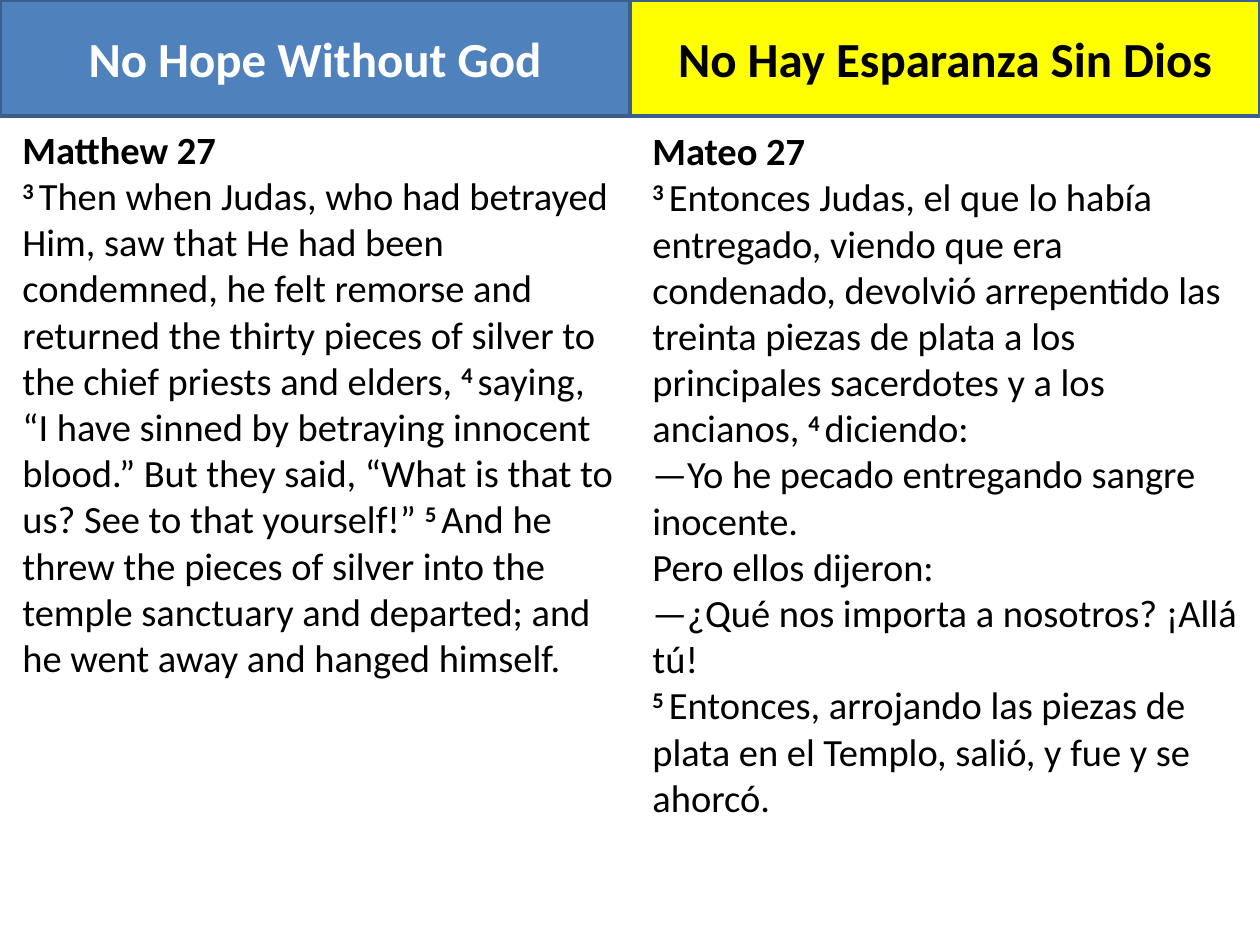
import pptx
import pptx.dml.color
import pptx.enum.shapes
import pptx.enum.text
import pptx.util

COLUMN = 1 / 2
HEADER_HEIGHT = 0.92 / 7.5
GUTTER = 0.08 / 10

# Each paragraph is a list of (verse number, text) pieces.
ENGLISH = [
    [("3", "Then when Judas, who had betrayed Him, saw that He had been condemned, "
           "he felt remorse and returned the thirty pieces of silver to the chief "
           "priests and elders, "),
     ("4", "saying, “I have sinned by betraying innocent blood.” But they said, "
           "“What is that to us? See to that yourself!” "),
     ("5", "And he threw the pieces of silver into the temple sanctuary and "
           "departed; and he went away and hanged himself.")],
]
SPANISH = [
    [("3", "Entonces Judas, el que lo había entregado, viendo que era condenado, "
           "devolvió arrepentido las treinta piezas de plata a los principales "
           "sacerdotes y a los ancianos, "),
     ("4", "diciendo:")],
    [("", "—Yo he pecado entregando sangre inocente.")],
    [("", "Pero ellos dijeron:")],
    [("", "—¿Qué nos importa a nosotros? ¡Allá tú!")],
    [("5", "Entonces, arrojando las piezas de plata en el Templo, salió, y fue y se "
           "ahorcó.")],
]


def color(code):
    return pptx.dml.color.RGBColor.from_string(code)


class ScriptureSlide:
    font_name = "Calibri"
    title_size = 28
    body_size = 22
    ink = "000000"
    border = "3A5F8C"

    def __init__(self, deck):
        self.width, self.height = deck.slide_width, deck.slide_height
        self.page = deck.slides.add_slide(deck.slide_layouts[6])

    def place(self, left, top, width, height):
        """Turn shares of the slide's size into lengths."""
        return (round(left * self.width), round(top * self.height),
                round(width * self.width), round(height * self.height))

    def style(self, para, size, ink):
        para.font.name = self.font_name
        para.font.size = pptx.util.Pt(size)
        para.font.color.rgb = color(ink)

    def header(self, column, title, fill, ink):
        box = self.page.shapes.add_shape(
            pptx.enum.shapes.MSO_SHAPE.RECTANGLE,
            *self.place(column * COLUMN, 0, COLUMN, HEADER_HEIGHT))
        box.shadow.inherit = False
        box.fill.solid()
        box.fill.fore_color.rgb = color(fill)
        box.line.color.rgb = color(self.border)
        box.line.width = pptx.util.Pt(2)
        box.text_frame.vertical_anchor = pptx.enum.text.MSO_ANCHOR.MIDDLE
        para = box.text_frame.paragraphs[0]
        para.text = title
        para.alignment = pptx.enum.text.PP_ALIGN.CENTER
        self.style(para, self.title_size, ink)
        para.font.bold = True

    def passage(self, column, top, height, chapter, paragraphs):
        box = self.page.shapes.add_textbox(
            *self.place(column * COLUMN + GUTTER, top, COLUMN - GUTTER, height))
        frame = box.text_frame
        frame.word_wrap = True
        frame.auto_size = pptx.enum.text.MSO_AUTO_SIZE.SHAPE_TO_FIT_TEXT
        heading = frame.paragraphs[0]
        heading.text = chapter
        self.style(heading, self.body_size, self.ink)
        heading.font.bold = True
        for pieces in paragraphs:
            para = frame.add_paragraph()
            self.style(para, self.body_size, self.ink)
            for verse, text in pieces:
                if verse:
                    self.verse_number(para, verse)
                para.add_run().text = text

    def verse_number(self, para, verse):
        """Add a bold raised number, held to the next word by a hard space."""
        span = para.add_run()
        span.text = f"{verse} "
        span.font.bold = True
        span._r.get_or_add_rPr().set("baseline", "30000")


def main():
    deck = pptx.Presentation()
    deck.slide_width = pptx.util.Inches(10)
    deck.slide_height = pptx.util.Inches(7.5)
    slide = ScriptureSlide(deck)
    slide.passage(0, 0.95 / 7.5, 4.91 / 7.5, "Matthew 27", ENGLISH)
    slide.passage(1, 0.96 / 7.5, 5.65 / 7.5, "Mateo 27", SPANISH)
    slide.header(0, "No Hope Without God", "4F81BD", "FFFFFF")
    slide.header(1, "No Hay Esparanza Sin Dios", "FFFF00", "000000")
    deck.save("out.pptx")


if __name__ == "__main__":
    main()
